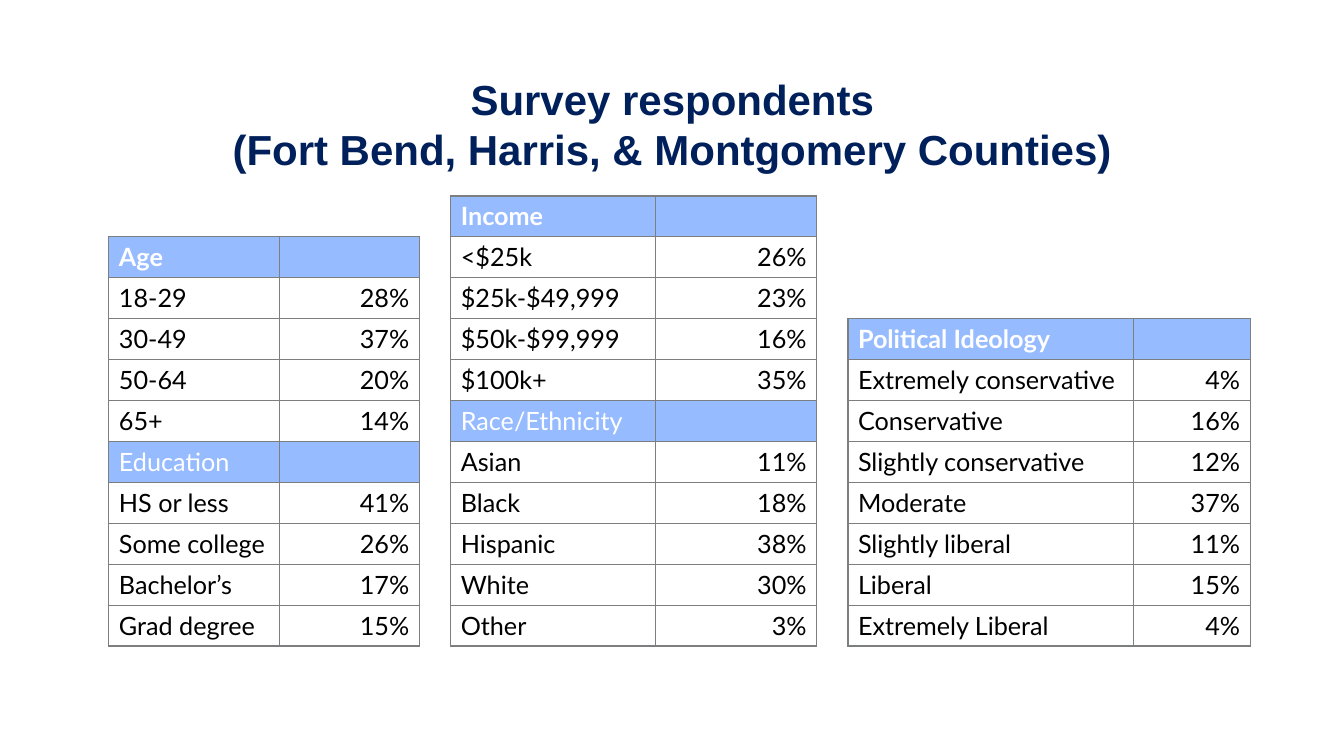
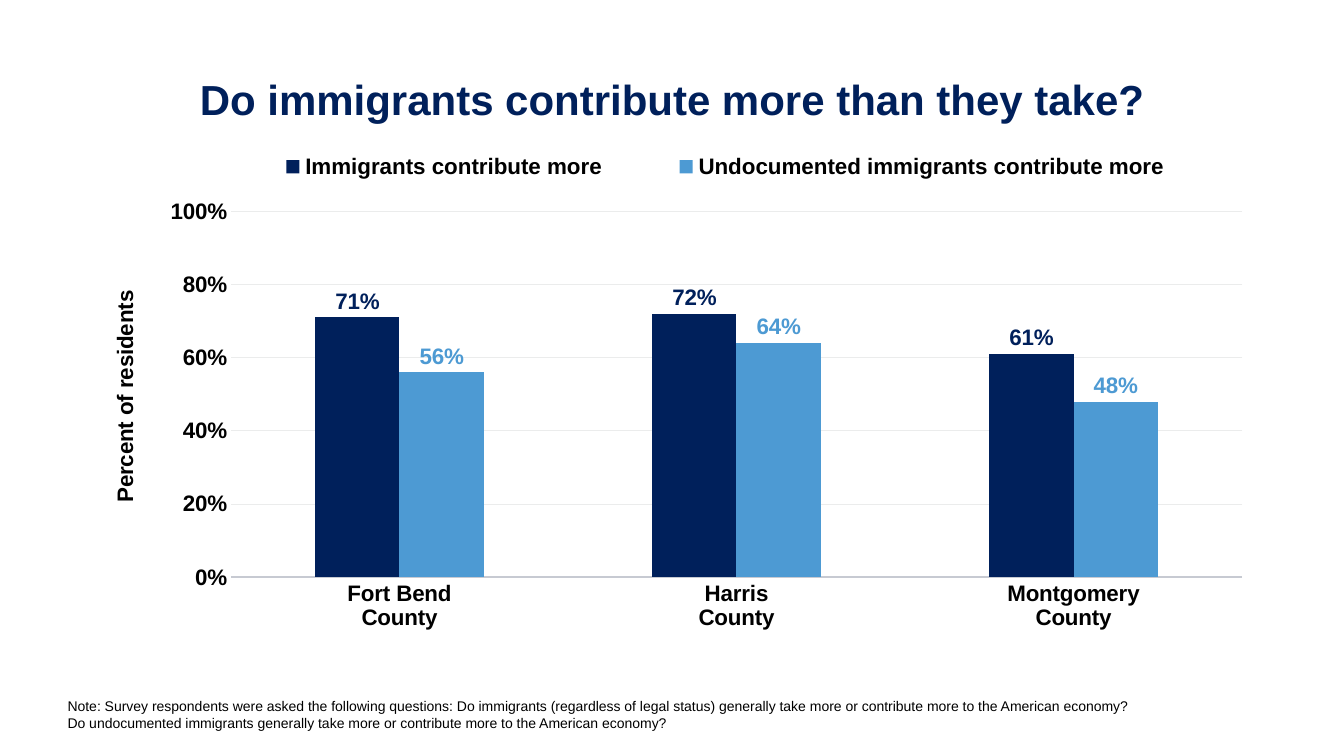
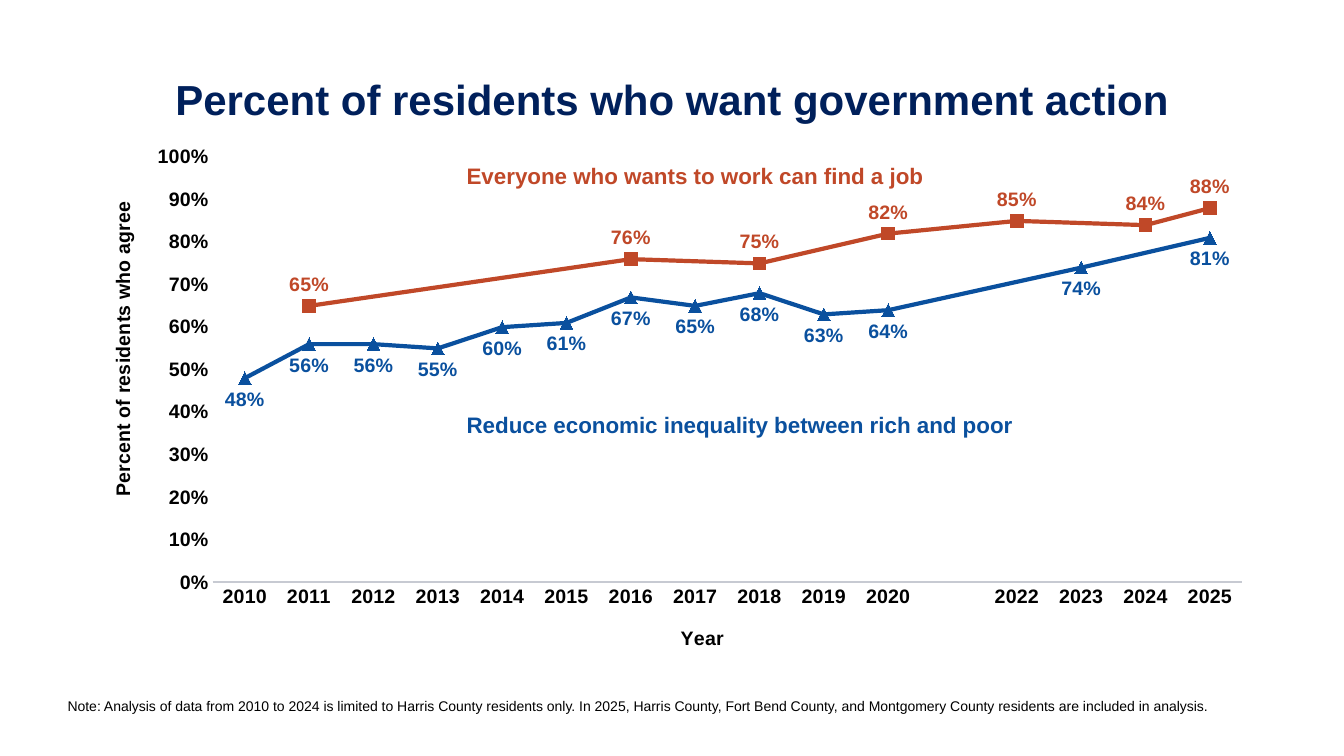
from lxml import etree
from pptx import Presentation
from pptx.chart.data import CategoryChartData
from pptx.dml.color import RGBColor
from pptx.enum.chart import XL_CHART_TYPE, XL_LABEL_POSITION, XL_MARKER_STYLE, XL_TICK_MARK
from pptx.enum.shapes import MSO_SHAPE
from pptx.enum.text import MSO_ANCHOR, MSO_AUTO_SIZE, PP_ALIGN
from pptx.oxml.ns import qn
from pptx.util import Inches, Pt

COLUMN, LINE = XL_CHART_TYPE.COLUMN_CLUSTERED, XL_CHART_TYPE.LINE_MARKERS
OUT, BELOW, ABOVE = (XL_LABEL_POSITION.OUTSIDE_END, XL_LABEL_POSITION.BELOW,
                     XL_LABEL_POSITION.ABOVE)
SQUARE, TRIANGLE = XL_MARKER_STYLE.SQUARE, XL_MARKER_STYLE.TRIANGLE
NO_TICK = XL_TICK_MARK.NONE
RECT = MSO_SHAPE.RECTANGLE
TOP, NO_FIT = MSO_ANCHOR.TOP, MSO_AUTO_SIZE.NONE
LEFT, CENTER, RIGHT = PP_ALIGN.LEFT, PP_ALIGN.CENTER, PP_ALIGN.RIGHT

# Shared style
SANS, TABLE_FONT = "Arial", "Lato"
NAVY, SKY, BLUE, RUST = "00205B", "4D9AD3", "0A509E", "C04828"
BLACK, WHITE, HEAD = "000000", "FFFFFF", "96BBFF"
BORDER, AXIS, GRID = "7C7E7F", "C7CAD2", "EBECEC"

# Slide 1: tables as (column widths, rows); a row without a value is a heading
SURVEY = "Survey respondents\n(Fort Bend, Harris, & Montgomery Counties)"
TABLES = [
    ((1.69, 1.39), [
        ("Age", ""), ("18-29", "28%"), ("30-49", "37%"), ("50-64", "20%"), ("65+", "14%"),
        ("Education", ""), ("HS or less", "41%"), ("Some college", "26%"),
        ("Bachelor’s", "17%"), ("Grad degree", "15%")]),
    ((2.03, 1.6), [
        ("Income", ""), ("<$25k", "26%"), ("$25k-$49,999", "23%"),
        ("$50k-$99,999", "16%"), ("$100k+", "35%"),
        ("Race/Ethnicity", ""), ("Asian", "11%"), ("Black", "18%"), ("Hispanic", "38%"),
        ("White", "30%"), ("Other", "3%")]),
    ((2.83, 1.16), [
        ("Political Ideology", ""), ("Extremely conservative", "4%"),
        ("Conservative", "16%"), ("Slightly conservative", "12%"), ("Moderate", "37%"),
        ("Slightly liberal", "11%"), ("Liberal", "15%"), ("Extremely Liberal", "4%")]),
]
TABLE_LEFT, TABLE_GAP, TABLE_END = Inches(1.08), Inches(0.31), Inches(6.41)
ROW = Inches(4.06) // 10

# Slide 2: values in percent
GIVE = "Do immigrants contribute more than they take?"
GIVE_NOTE = ("Note: Survey respondents were asked the following questions: Do immigrants "
             "(regardless of legal status) generally take more or contribute more to the "
             "American economy?\vDo undocumented immigrants generally take more or "
             "contribute more to the American economy?")
COUNTIES = ["Fort Bend\nCounty", "Harris\nCounty", "Montgomery\nCounty"]
GIVE_DATA = [
    ("Immigrants contribute more", [71, 72, 61], NAVY, OUT),
    ("Undocumented immigrants contribute more", [56, 64, 48], SKY, OUT),
]
KEYS = [2.84, 6.74]

# Slide 3: values in percent, None where no survey was held
ACT = "Percent of residents who want government action"
ACT_NOTE = ("Note: Analysis of data from 2010 to 2024 is limited to Harris County residents "
            "only. In 2025, Harris County, Fort Bend County, and Montgomery County residents "
            "are included in analysis.")
YEARS = ["" if year == 2021 else str(year) for year in range(2010, 2026)]
ACT_DATA = [
    ("Reduce economic inequality between rich and poor",
     [48, 56, 56, 55, 60, 61, 67, 65, 68, 63, 64, None, None, 74, None, 81], BLUE, BELOW),
    ("Everyone who wants to work can find a job",
     [None, 65, None, None, None, None, 76, None, 75, None, 82, None, 85, None, 84, 88],
     RUST, ABOVE),
]
MARKS = [TRIANGLE, SQUARE]
NAME_TOPS = [4.03, 1.56]


def rgb(code):
    return RGBColor.from_string(code)


def style(font, size, color=BLACK, bold=False, name=SANS):
    font.name, font.size, font.bold = name, Pt(size), bold
    font.color.rgb = rgb(color)


def box(at):
    return [Inches(n) for n in at]


def write(frame, text, size, color=BLACK, bold=False, align=LEFT):
    frame.word_wrap, frame.auto_size, frame.vertical_anchor = True, NO_FIT, TOP
    frame.text = text
    for para in frame.paragraphs:
        para.alignment = align
        for run in para.runs:
            style(run.font, size, color, bold)


def add_slide(title):
    slide = deck.slides.add_slide(deck.slide_layouts[5])
    head = slide.shapes.title
    lines = title.count("\n") + 1
    head.left, head.top, head.width, head.height = box((0.67, 0.68, 12, 0.1 + 0.5 * lines))
    write(head.text_frame, title, 30, NAVY, True, CENTER)
    return slide


def add_text(slide, at, *args):
    frame = slide.shapes.add_textbox(*box(at)).text_frame
    write(frame, *args)
    return frame


def add_note(slide, text):
    frame = add_text(slide, (0.67, 6.92, 12.5, 0.34), text, 10)
    frame.margin_left = frame.margin_top = frame.margin_right = frame.margin_bottom = 0


def add_border(cell):
    props = cell._tc.get_or_add_tcPr()
    for side in ("a:lnL", "a:lnR", "a:lnT", "a:lnB"):
        line = etree.SubElement(props, qn(side), w=str(Pt(1)))
        fill = etree.SubElement(line, qn("a:solidFill"))
        etree.SubElement(fill, qn("a:srgbClr"), val=BORDER)


def add_table(slide, left, widths, rows):
    widths, height = box(widths), ROW * len(rows)
    table = slide.shapes.add_table(len(rows), len(widths), left, TABLE_END - height,
                                   sum(widths), height).table
    table.first_row = table.horz_banding = False
    for col, width in zip(table.columns, widths):
        col.width = width
    for i, row in enumerate(rows):
        is_head = not row[1]
        for j, text in enumerate(row):
            cell = table.cell(i, j)
            add_border(cell)
            if is_head:
                cell.fill.solid()
                cell.fill.fore_color.rgb = rgb(HEAD)
            else:
                cell.fill.background()
            para = cell.text_frame.paragraphs[0]
            para.text = text
            para.alignment = RIGHT if j else LEFT
            style(para.font, 18, WHITE if is_head else BLACK, i == 0, TABLE_FONT)
            for run in para.runs:
                style(run.font, 18, WHITE if is_head else BLACK, i == 0, TABLE_FONT)
    return left + sum(widths)


def place(part, index, **spots):
    """Give a chart part a fixed place, in fractions of the chart."""
    old = part.find(qn("c:layout"))
    if old is not None:
        part.remove(old)
    layout = etree.Element(qn("c:layout"))
    manual = etree.SubElement(layout, qn("c:manualLayout"))
    if "w" in spots:
        etree.SubElement(manual, qn("c:layoutTarget"), val="inner")
    for mode in ("c:xMode", "c:yMode"):
        etree.SubElement(manual, qn(mode), val="edge")
    for key, value in spots.items():
        etree.SubElement(manual, qn("c:" + key), val=str(value))
    part.insert(index, layout)


def add_title(axis, text, size, x, y):
    title = axis.axis_title
    title.text_frame.text = text
    style(title.text_frame.paragraphs[0].runs[0].font, size, BLACK, True)
    place(title._element, 1, x=x, y=y)
    return title


def add_chart(slide, kind, at, cats, rows, size, step, plot, title, title_y):
    data = CategoryChartData(number_format="0%")
    data.categories = cats
    for name, vals, _, _ in rows:
        data.add_series(name, [None if v is None else v / 100 for v in vals])
    chart = slide.shapes.add_chart(kind, *box(at), data).chart
    chart.has_legend = chart.has_title = False
    style(chart.font, size, BLACK, True)
    # Axes
    cat, val = chart.category_axis, chart.value_axis
    for axis in (cat, val):
        axis.major_tick_mark = axis.minor_tick_mark = NO_TICK
        axis.has_major_gridlines = False
        style(axis.tick_labels.font, size, BLACK, True)
    cat.format.line.color.rgb = rgb(AXIS)
    cat.format.line.width = Pt(1.5)
    val.format.line.fill.background()
    val.minimum_scale, val.maximum_scale, val.major_unit = 0, 1, step
    val.tick_labels.number_format = "0%"
    val.tick_labels.number_format_is_linked = False
    turn = add_title(val, title, size, 0.005, title_y).text_frame._txBody.bodyPr
    turn.set("rot", "-5400000")
    turn.set("vert", "horz")
    # Labels
    chart.plots[0].vary_by_categories = False
    for series, (_, _, color, spot) in zip(chart.plots[0].series, rows):
        labels = series.data_labels
        labels.show_value, labels.position = True, spot
        labels.number_format, labels.number_format_is_linked = "0%", False
        style(labels.font, size, color, True)
    # Plot area, with lines drawn across missing years
    root = chart._chartSpace.chart
    place(root.plotArea, 0, **dict(zip("xywh", plot)))
    root.find(qn("c:dispBlanksAs")).set("val", "span")
    return chart


def paint(part, color):
    part.fill.solid()
    part.fill.fore_color.rgb = rgb(color)


def survey_slide():
    slide = add_slide(SURVEY)
    left = TABLE_LEFT
    for widths, rows in TABLES:
        left = add_table(slide, left, widths, rows) + TABLE_GAP


def give_slide():
    slide = add_slide(GIVE)
    add_note(slide, GIVE_NOTE)
    chart = add_chart(slide, COLUMN, (1, 1.42, 11.33, 5.08), COUNTIES, GIVE_DATA, 16, 0.2,
                      (0.114, 0.133, 0.886, 0.715), "Percent of residents", 0.28)
    grid = chart.value_axis.major_gridlines.format.line
    grid.color.rgb = rgb(GRID)
    grid.width = Pt(0.75)
    plot = chart.plots[0]
    plot.gap_width, plot.overlap = 200, 0
    for series, left, (name, _, color, _) in zip(plot.series, KEYS, GIVE_DATA):
        paint(series.format, color)
        # Legend entry
        add_text(slide, (left + 0.09, 1.46, 5.2 if left > 6 else 3.7, 0.37),
                 name, 16, BLACK, True)
        key = slide.shapes.add_shape(RECT, *box((left, 1.59, 0.13, 0.13)))
        key.shadow.inherit = False
        paint(key, color)
        key.line.fill.background()


def act_slide():
    slide = add_slide(ACT)
    add_note(slide, ACT_NOTE)
    chart = add_chart(slide, LINE, (1, 1.36, 11.33, 5.14), YEARS, ACT_DATA, 14, 0.1,
                      (0.098, 0.039, 0.902, 0.825), "Percent of residents who agree", 0.12)
    add_title(chart.category_axis, "Year", 14, 0.505, 0.94)
    for series, mark, top, (name, _, color, _) in zip(chart.plots[0].series, MARKS,
                                                      NAME_TOPS, ACT_DATA):
        series.smooth = False
        series.format.line.color.rgb = rgb(color)
        series.format.line.width = Pt(3)
        series.marker.style, series.marker.size = mark, 9
        paint(series.marker.format, color)
        series.marker.format.line.color.rgb = rgb(color)
        add_text(slide, (4.53, top, 5.8, 0.37), name, 16, color, True)


deck = Presentation()
deck.slide_width, deck.slide_height = Inches(13.33), Inches(7.5)
survey_slide()
give_slide()
act_slide()
deck.save("out.pptx")
